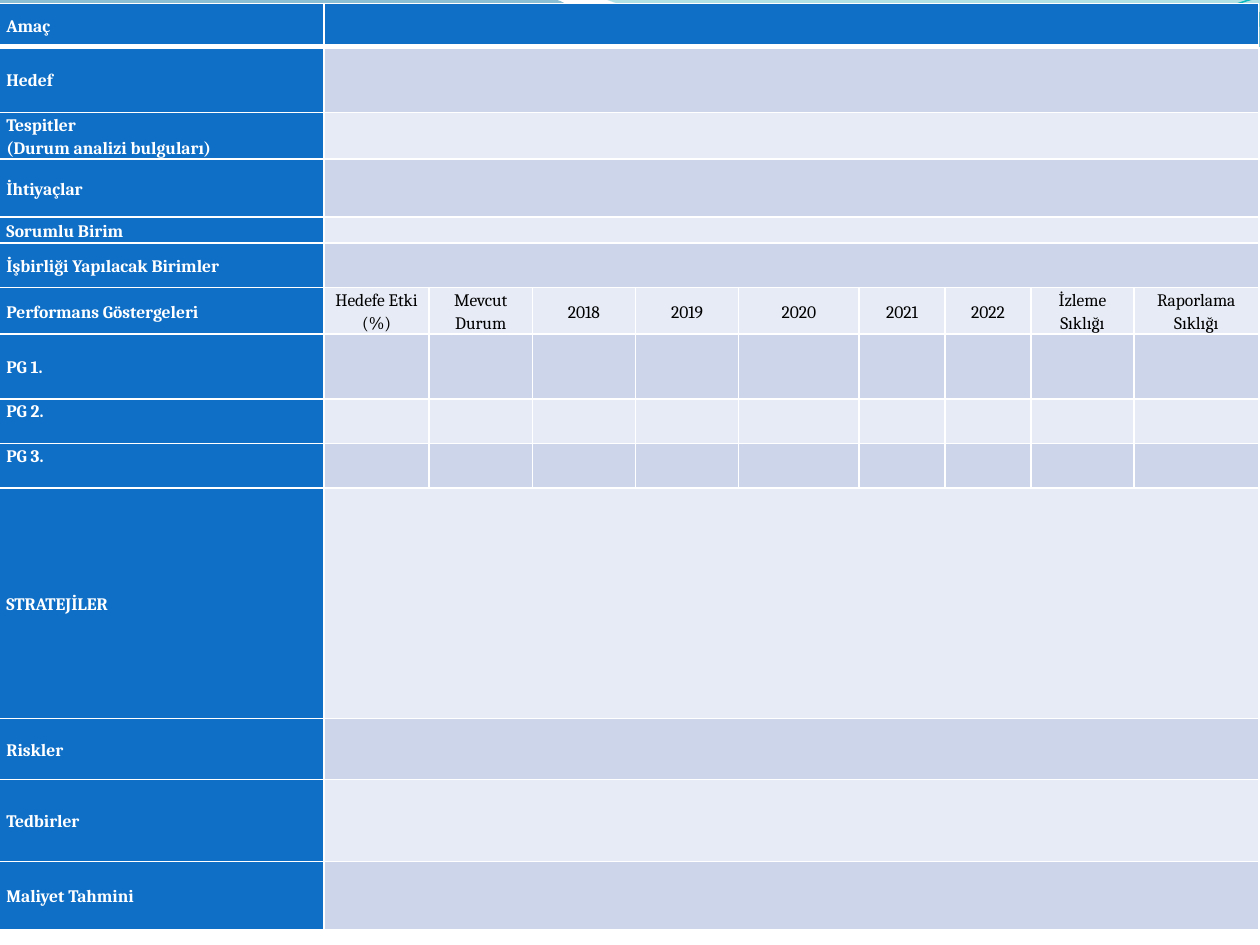
from lxml.etree import SubElement
from pptx import Presentation
from pptx.dml.color import RGBColor
from pptx.enum.text import MSO_ANCHOR, PP_ALIGN
from pptx.oxml import parse_xml
from pptx.oxml.ns import nsdecls, qn
from pptx.util import Cm, Pt

COLORS = {
    "label": "0F6FC6", "band_dark": "CCD5EA", "band_light": "E7EBF5",
    "white": "FFFFFF", "black": "000000", "curve": "0AB8BF",
    "deep_blue": "0074A1", "cyan": "00C6CF", "teal": "00A1A9", "sea": "008BBF",
}

# Each segment is a line end (one point) or a Bézier curve (three points), in cm.
LEFT_WAVE = [
    [(0, 0)],
    [(11.18, -0.03)],
    [(12.09, 0.43), (16.87, 1.6), (19.25, 1.6)],
    [(21.67, 1.6), (24.33, 0.66), (25.4, 0.23)],
    [(25.43, 0.91)],
    [(24.97, 1.12), (22.1, 1.93), (18.95, 1.91)],
    [(15.8, 1.91), (9.7, 0.71), (6.53, 0.86)],
    [(3.28, 0.91), (1.17, 2.11), (-0.03, 2.87)],
]
RIGHT_WAVE = [
    [(12.17, -0.03)],
    [(12.93, 0.28), (17.32, 1.57), (19.53, 1.65)],
    [(21.74, 1.75), (24.41, 0.81), (25.4, 0.53)],
    [(25.4, 0)],
]
TEAL_CURVE = [
    [(0, 2.82)],
    [(1.22, 2.36), (4.01, 1.45), (7.04, 1.32)],
    [(10.03, 1.19), (15.06, 2.26), (18.11, 2.03)],
    [(21.16, 1.8), (23.83, 0.38), (25.35, -0.05)],
]

COLUMN_WIDTHS = [6.55, 2.12, 2.08, 2.08, 2.08, 2.43, 1.73, 1.73, 2.08, 2.51]
PLAN_ROWS = [
    ("Amaç", 0.87), ("Hedef", 1.33),
    ("Tespitler\n(Durum analizi bulguları)", 0.93),
    ("İhtiyaçlar", 1.17), ("Sorumlu Birim", 0.52),
    ("İşbirliği Yapılacak Birimler", 0.9),
    ("Performans Göstergeleri", 0.93),
    ("PG 1.", 1.31), ("PG 2.", 0.9), ("PG 3.", 0.89),
    ("STRATEJİLER", 4.65), ("Riskler", 1.23), ("Tedbirler", 1.65),
    ("Maliyet Tahmini", 1.37),
]
INDICATOR_HEADINGS = ["Hedefe Etki (%)", "Mevcut Durum", "2018", "2019", "2020",
                      "2021", "2022", "İzleme Sıklığı", "Raporlama Sıklığı"]
INDICATOR_ROW = 6
SPLIT_ROWS = range(6, 10)
TOP_ANCHORED = ("PG 2.", "PG 3.")


class PlanSlide:
    """Holds the text style and the current slide."""

    font_name = "Cambria"
    font_size = Pt(10)
    line_spacing = 1.15

    def __init__(self, presentation):
        self.slide = presentation.slides.add_slide(presentation.slide_layouts[6])

    def outline(self, segments, close):
        """Add a freeform, turning each three-point segment into one Bézier curve."""
        start, *rest = [(Cm(x), Cm(y)) for segment in segments for x, y in segment]
        builder = self.slide.shapes.build_freeform(*start)
        builder.add_line_segments(rest, close=close)
        shape = builder.convert_to_shape()
        shape.shadow.inherit = False
        lines = iter(list(shape._element.iter(qn("a:lnTo"))))
        for segment in segments[1:]:
            steps = [next(lines) for _ in segment]
            if len(steps) == 3:
                bezier = parse_xml(f'<a:cubicBezTo {nsdecls("a")}/>')
                steps[0].addprevious(bezier)
                for step in steps:
                    bezier.append(step[0])
                    step.getparent().remove(step)
        return shape

    def wave(self, segments, stops):
        """Add a closed shape; stops are (position, colour, opacity in percent)."""
        wave = self.outline(segments, close=True)
        wave.line.fill.background()
        wave.fill.gradient()
        wave.fill.gradient_angle = 270
        for stop, (position, color, _) in zip(wave.fill.gradient_stops, stops):
            stop.position = position
            stop.color.rgb = RGBColor.from_string(COLORS[color])
        tints = wave._element.spPr.iter(qn("a:srgbClr"))
        for tint, (_, _, opacity) in zip(tints, stops):
            SubElement(tint, qn("a:alpha"), val=str(opacity * 1000))

    def curve(self, segments, color, width):
        curve = self.outline(segments, close=False)
        curve.fill.background()
        curve.line.color.rgb = RGBColor.from_string(COLORS[color])
        curve.line.width = Pt(width)

    def table(self, left, top, widths, heights):
        frame = self.slide.shapes.add_table(
            len(heights), len(widths), Cm(left), Cm(top),
            Cm(sum(widths)), Cm(sum(heights)))
        table = frame.table
        table.first_row = table.horz_banding = False
        for column, width in zip(table.columns, widths):
            column.width = Cm(width)
        for row, height in zip(table.rows, heights):
            row.height = Cm(height)
        return table

    def cell(self, cell, text, fill, color="white", bold=True,
             align=PP_ALIGN.LEFT, anchor=MSO_ANCHOR.MIDDLE, bottom_width=1):
        cell.fill.solid()
        cell.fill.fore_color.rgb = RGBColor.from_string(COLORS[fill])
        cell.margin_left = cell.margin_right = Cm(0.15)
        cell.margin_top = cell.margin_bottom = 0
        cell.vertical_anchor = anchor
        cell.text = text
        for paragraph in cell.text_frame.paragraphs:
            paragraph.alignment = align
            paragraph.line_spacing = self.line_spacing
            paragraph.font.name = self.font_name
            paragraph.font.size = self.font_size
            paragraph.font.bold = bold
            paragraph.font.color.rgb = RGBColor.from_string(COLORS[color])
        self.borders(cell, bottom_width)

    def borders(self, cell, bottom_width):
        properties = cell._tc.get_or_add_tcPr()
        sides = {"lnL": 1, "lnR": 1, "lnT": 1, "lnB": bottom_width}
        for index, (side, width) in enumerate(sides.items()):
            properties.insert(index, parse_xml(
                f'<a:{side} {nsdecls("a")} w="{Pt(width)}"><a:solidFill>'
                f'<a:srgbClr val="{COLORS["white"]}"/></a:solidFill></a:{side}>'))


def main():
    presentation = Presentation()
    presentation.slide_width, presentation.slide_height = Cm(25.4), Cm(19.05)
    plan = PlanSlide(presentation)

    plan.wave(LEFT_WAVE, [(0, "deep_blue", 45), (1, "cyan", 55)])
    plan.wave(RIGHT_WAVE, [(0, "teal", 30), (0.8, "sea", 45)])
    plan.curve(TEAL_CURVE, "curve", 0.85)

    table = plan.table(-0.02, 0.07, COLUMN_WIDTHS, [height for _, height in PLAN_ROWS])
    for row, (label, _) in enumerate(PLAN_ROWS):
        bottom_width = 3 if row == 0 else 1
        anchor = MSO_ANCHOR.TOP if label in TOP_ANCHORED else MSO_ANCHOR.MIDDLE
        plan.cell(table.cell(row, 0), label, "label", anchor=anchor,
                  bottom_width=bottom_width)
        band = "label" if row == 0 else "band_dark" if row % 2 else "band_light"
        for column, heading in enumerate(INDICATOR_HEADINGS, start=1):
            plan.cell(table.cell(row, column), heading if row == INDICATOR_ROW else "",
                      band, color="black", bold=False, align=PP_ALIGN.CENTER,
                      bottom_width=bottom_width)
        if row not in SPLIT_ROWS:
            table.cell(row, 1).merge(table.cell(row, len(INDICATOR_HEADINGS)))

    presentation.save("out.pptx")


if __name__ == "__main__":
    main()
